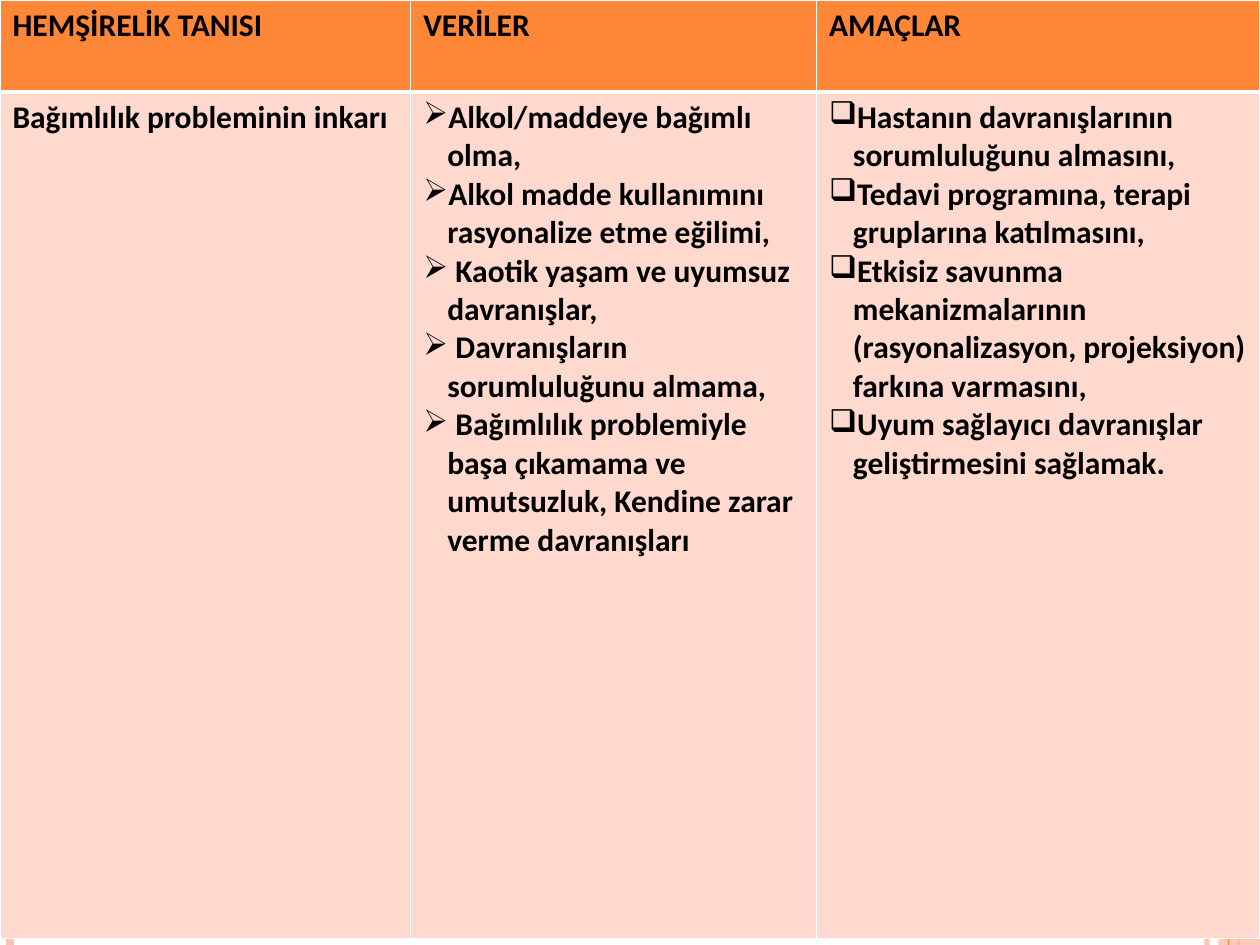
import pptx
import pptx.dml.color
import pptx.enum.shapes
import pptx.oxml
import pptx.oxml.ns
import pptx.util
from lxml import etree

Inches = pptx.util.Inches
Pt = pptx.util.Pt
qn = pptx.oxml.ns.qn

HEADERS = ["HEMŞİRELİK TANISI", "VERİLER", "AMAÇLAR"]
DIAGNOSIS = ["Bağımlılık probleminin inkarı"]
FINDINGS = [
    "Alkol/maddeye bağımlı olma,",
    "Alkol madde kullanımını rasyonalize etme eğilimi,",
    " Kaotik yaşam ve uyumsuz davranışlar,",
    " Davranışların sorumluluğunu almama,",
    " Bağımlılık problemiyle başa çıkamama ve umutsuzluk, "
    "Kendine zarar verme davranışları",
]
GOALS = [
    "Hastanın davranışlarının sorumluluğunu almasını,",
    "Tedavi programına, terapi gruplarına katılmasını,",
    "Etkisiz savunma mekanizmalarının (rasyonalizasyon, projeksiyon) "
    "farkına varmasını,",
    "Uyum sağlayıcı davranışlar geliştirmesini sağlamak.",
]


def color(hex_value):
    return pptx.dml.color.RGBColor.from_string(hex_value)


def set_opacity(fill, percent):
    """Make a solid fill partly transparent."""
    color_element = fill._xPr.find(qn("a:solidFill"))[0]
    etree.SubElement(color_element, qn("a:alpha"), val=str(percent * 1000))


class CarePlanSlide:
    font = "Calibri"
    text_size = 18
    text_color = "000000"
    orange = "FE8637"
    peach = "FEC3AE"
    pale = "FFD9CE"
    border_color = "FFFFFF"
    bullet_indent = 0.19

    def __init__(self, presentation):
        self.height = presentation.slide_height
        self.slide = presentation.slides.add_slide(presentation.slide_layouts[6])

    def vertical_line(self, x, line_color, width, opacity=100):
        line = self.slide.shapes.add_connector(
            pptx.enum.shapes.MSO_CONNECTOR.STRAIGHT,
            Inches(x), 0, Inches(x), self.height)
        line.line.color.rgb = color(line_color)
        line.line.width = Pt(width)
        if opacity < 100:
            set_opacity(line.line.fill, opacity)
        etree.SubElement(line._element.spPr, qn("a:effectLst"))

    def vertical_band(self, x, width, fill_color, opacity):
        band = self.slide.shapes.add_shape(
            pptx.enum.shapes.MSO_SHAPE.RECTANGLE,
            Inches(x), 0, Inches(width), self.height)
        band.shadow.inherit = False
        band.fill.solid()
        band.fill.fore_color.rgb = color(fill_color)
        set_opacity(band.fill, opacity)
        band.line.fill.background()

    def table(self, column_widths, row_heights):
        table = self.slide.shapes.add_table(
            len(row_heights), len(column_widths), 0, 0,
            Inches(sum(column_widths)), Inches(sum(row_heights))).table
        for column, width in zip(table.columns, column_widths):
            column.width = Inches(width)
        for row, height in zip(table.rows, row_heights):
            row.height = Inches(height)
        return table

    def borders(self, cell, top=1, bottom=1):
        properties = cell._tc.get_or_add_tcPr()
        for side, width in (("L", 1), ("R", 1), ("T", top), ("B", bottom)):
            line = etree.SubElement(properties, qn(f"a:ln{side}"), w=str(Pt(width)))
            fill = etree.SubElement(line, qn("a:solidFill"))
            etree.SubElement(fill, qn("a:srgbClr"), val=self.border_color)

    def bullet(self, paragraph, character):
        properties = paragraph._p.get_or_add_pPr()
        indent = Inches(self.bullet_indent)
        properties.set("marL", str(indent))
        properties.set("indent", str(-indent))
        properties.insert(0, etree.Element(qn("a:buChar"), char=character))

    def cell(self, cell, lines, fill_color, bullet=None, **border_widths):
        self.borders(cell, **border_widths)
        cell.fill.solid()
        cell.fill.fore_color.rgb = color(fill_color)
        cell.text_frame.text = "\n".join(lines)
        for paragraph in cell.text_frame.paragraphs:
            paragraph.font.name = self.font
            paragraph.font.size = Pt(self.text_size)
            paragraph.font.bold = True
            paragraph.font.color.rgb = color(self.text_color)
            if bullet:
                self.bullet(paragraph, bullet)


def main():
    presentation = pptx.Presentation()
    presentation.slide_width = Inches(10)
    presentation.slide_height = Inches(7.5)
    plan = CarePlanSlide(presentation)

    plan.vertical_line(9.58, plan.peach, 3, opacity=93)
    plan.vertical_line(0.08, plan.peach, 4.5)
    plan.vertical_line(9.83, plan.orange, 1.5)
    plan.vertical_band(9.67, 0.33, plan.peach, opacity=87)
    plan.vertical_line(9.75, plan.orange, 0.75)

    table = plan.table([3.26, 3.22, 3.52], [0.73, 6.72])
    columns = [(DIAGNOSIS, None), (FINDINGS, "➢"), (GOALS, "❑")]
    for index, (header, (lines, bullet)) in enumerate(zip(HEADERS, columns)):
        plan.cell(table.cell(0, index), [header], plan.orange, bottom=3)
        plan.cell(table.cell(1, index), lines, plan.pale, bullet, top=3)

    presentation.save("out.pptx")


if __name__ == "__main__":
    main()
